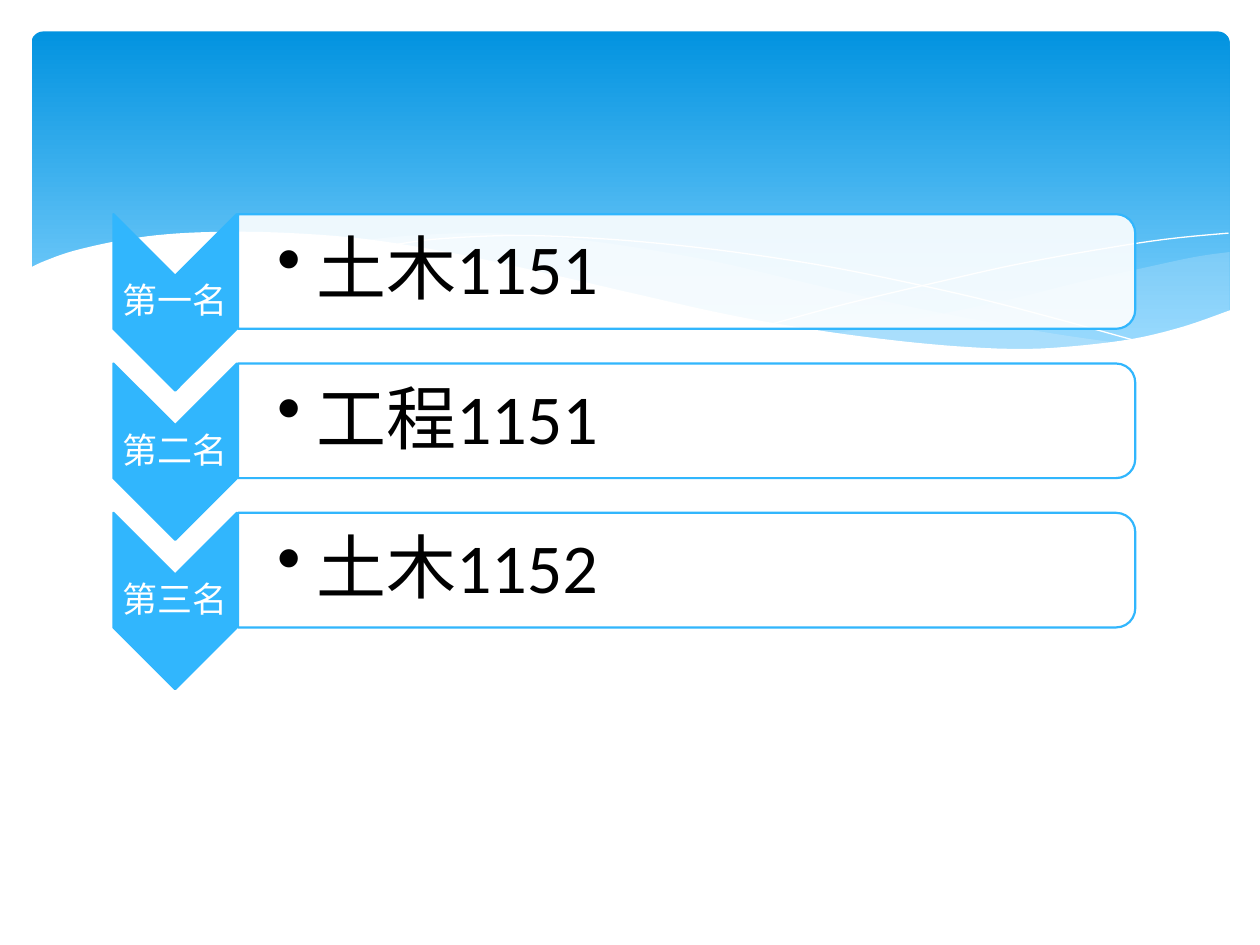
"""Build a slide ranking three classes on chevrons beneath a blue wave banner."""
from lxml.etree import SubElement
from pptx import Presentation
from pptx.dml.color import RGBColor as Rgb
from pptx.enum.shapes import MSO_SHAPE as Preset
from pptx.enum.text import MSO_ANCHOR as Anchor, PP_ALIGN as Align
from pptx.oxml.ns import qn
from pptx.util import Inches, Pt

RANKING = [("第一名", "土木1151"), ("第二名", "工程1151"), ("第三名", "土木1152")]

COLORS = {"deep": "0293E0", "sky": "83D3FE", "mist": "C6E7FC",
          "accent": "31B6FD", "white": "FFFFFF", "black": "000000"}

WAVES = [
    {"fill": "mist", "alpha": 29, "strands": [
        [(9.76, 2), (9.48, 2.04), (9.06, 2.13), (8.61, 2.23), (8.05, 2.37),
         (7.53, 2.48), (7.06, 2.57), (6.61, 2.65)],
        [(6.61, 2.65), (7.05, 2.71), (7.57, 2.76), (8.03, 2.78), (8.54, 2.76),
         (8.97, 2.7), (9.35, 2.62), (9.76, 2.47)]]},
    {"fill": "mist", "alpha": 40, "strands": [
        [(8.93, 2.73), (8.37, 2.65), (7.75, 2.54), (7.06, 2.4), (6.29, 2.22),
         (5.69, 2.08), (5.14, 1.98), (4.65, 1.91), (4.2, 1.87), (3.8, 1.85),
         (3.28, 1.87), (2.86, 1.91)],
        [(2.86, 1.91), (3.42, 1.99), (4.04, 2.11), (4.49, 2.22), (5.3, 2.4),
         (6.01, 2.55), (6.65, 2.66), (7.22, 2.74), (7.73, 2.77), (8.18, 2.78),
         (8.57, 2.77), (8.93, 2.73)]]},
    {"line": "white", "strands": [
        [(3.09, 1.95), (3.44, 1.9), (4.01, 1.87), (4.5, 1.88), (5.1, 1.92),
         (5.82, 2), (6.65, 2.13), (7.6, 2.33), (8.31, 2.51), (9.07, 2.72)]]},
    {"line": "white", "strands": [
        [(6.13, 2.57), (6.72, 2.41), (7.48, 2.23), (8.06, 2.1), (8.66, 1.99),
         (9.24, 1.9), (9.75, 1.85)]]},
    {"fill": "white", "strands": [
        [(9.77, 2.46), (9.4, 2.59), (8.99, 2.69), (8.5, 2.75), (8.09, 2.77),
         (7.61, 2.75), (7.08, 2.7), (6.48, 2.62), (5.79, 2.5), (5.03, 2.33),
         (4.47, 2.2), (3.65, 2.02), (2.92, 1.9), (2.3, 1.85), (1.77, 1.84),
         (1.32, 1.86), (0.95, 1.91), (0.59, 1.99), (0.36, 2.07), (0.23, 2.13)],
        [(0.23, 3.29), (9.77, 3.29)]]},
]

ROW_TOP, ROW_PITCH = 1.7, 1.185
CHEVRON_LEFT, CHEVRON_W, CHEVRON_H = 0.9, 0.98, 1.4
BAR_LEFT, BAR_W, BAR_H = 1.89, 7.12, 0.91
RANK_FORMAT = {"size": Pt(20), "name": "Calibri"}
CLASS_FORMAT = {"size": Pt(40), "name": "Calibri"}


def rgb(color):
    return Rgb.from_string(COLORS[color])


def smooth(knots, steps=5):
    """Return points of a Catmull-Rom curve through the knots."""
    if len(knots) < 3:
        return knots
    ends = [knots[0], *knots, knots[-1]]
    points = [knots[0]]
    for a, b, c, d in zip(ends, ends[1:], ends[2:], ends[3:]):
        for step in range(1, steps + 1):
            t = step / steps
            points.append(tuple(
                q + t / 2 * (r - p + t * (2 * p - 5 * q + 4 * r - s
                                          + t * (3 * (q - r) + s - p)))
                for p, q, r, s in zip(a, b, c, d)))
    return points


def paint(shape, fill=None, alpha=100, line=None, width=0):
    shape.shadow.inherit = False
    if fill:
        shape.fill.solid()
        shape.fill.fore_color.rgb = rgb(fill)
        if alpha < 100:
            tint = shape.fill._xPr.find(".//" + qn("a:srgbClr"))
            SubElement(tint, qn("a:alpha"), val=str(alpha * 1000))
    else:
        shape.fill.background()
    if line:
        shape.line.color.rgb = rgb(line)
        shape.line.width = Pt(width)
    else:
        shape.line.fill.background()


def add_banner(shapes):
    banner = shapes.add_shape(Preset.ROUNDED_RECTANGLE,
                              *map(Inches, (0.25, 0.25, 9.51, 2.7)))
    paint(banner)
    banner.adjustments[0] = 0.034
    banner.fill.gradient()
    banner.fill.gradient_angle = 270
    for stop, color, position in zip(banner.fill.gradient_stops, ("deep", "sky"), (0, 0.9)):
        stop.color.rgb = rgb(color)
        stop.position = position


def add_wave(shapes, strands, **style):
    start, *rest = [(Inches(x), Inches(y)) for strand in strands for x, y in smooth(strand)]
    outline = shapes.build_freeform(*start)
    outline.add_line_segments(rest, close="fill" in style)
    paint(outline.convert_to_shape(), **style)


def add_turned(shapes, preset, left, top, width, height, **style):
    """Add a preset turned by 90 degrees that covers the given box."""
    shift = (width - height) / 2
    turned = shapes.add_shape(
        preset, *map(Inches, (left + shift, top - shift, height, width)))
    turned.rotation = 90
    paint(turned, line="accent", width=1.25, **style)


def add_label(shapes, text, box, insets, color, font_format):
    label = shapes.add_textbox(*map(Inches, box))
    frame = label.text_frame
    frame.word_wrap = True
    frame.vertical_anchor = Anchor.MIDDLE
    for side, inset in zip(("left", "top", "right", "bottom"), insets):
        setattr(frame, f"margin_{side}", Inches(inset))
    paragraph = frame.paragraphs[0]
    paragraph.line_spacing = 0.9
    run = paragraph.add_run()
    run.text = text
    run.font.color.rgb = rgb(color)
    for key, value in font_format.items():
        setattr(run.font, key, value)
    return paragraph


def add_bullet(paragraph, indent):
    props = paragraph._p.get_or_add_pPr()
    props.set("marL", str(Inches(indent)))
    props.set("indent", str(-Inches(indent)))
    SubElement(props, qn("a:buChar"), char="•")


def add_row(shapes, top, rank, class_name):
    add_turned(shapes, Preset.CHEVRON, CHEVRON_LEFT, top, CHEVRON_W, CHEVRON_H, fill="accent")
    rank_label = add_label(shapes, rank, (CHEVRON_LEFT, top + 0.49, CHEVRON_W, 0.42),
                           [0.01] * 4, "white", RANK_FORMAT)
    rank_label.alignment = Align.CENTER
    add_turned(shapes, Preset.ROUND_2_SAME_RECTANGLE, BAR_LEFT, top, BAR_W, BAR_H,
               fill="white", alpha=90)
    class_label = add_label(shapes, class_name, (BAR_LEFT, top + 0.05, 7.08, 0.82),
                            (0.31, 0.03, 0.03, 0.03), "black", CLASS_FORMAT)
    add_bullet(class_label, 0.31)


def main():
    deck = Presentation()
    deck.slide_width, deck.slide_height = Inches(10), Inches(7.5)
    shapes = deck.slides.add_slide(deck.slide_layouts[6]).shapes
    add_banner(shapes)
    for wave in WAVES:
        add_wave(shapes, **wave)
    for row, (rank, class_name) in enumerate(RANKING):
        add_row(shapes, ROW_TOP + row * ROW_PITCH, rank, class_name)
    deck.save("out.pptx")


if __name__ == "__main__":
    main()
